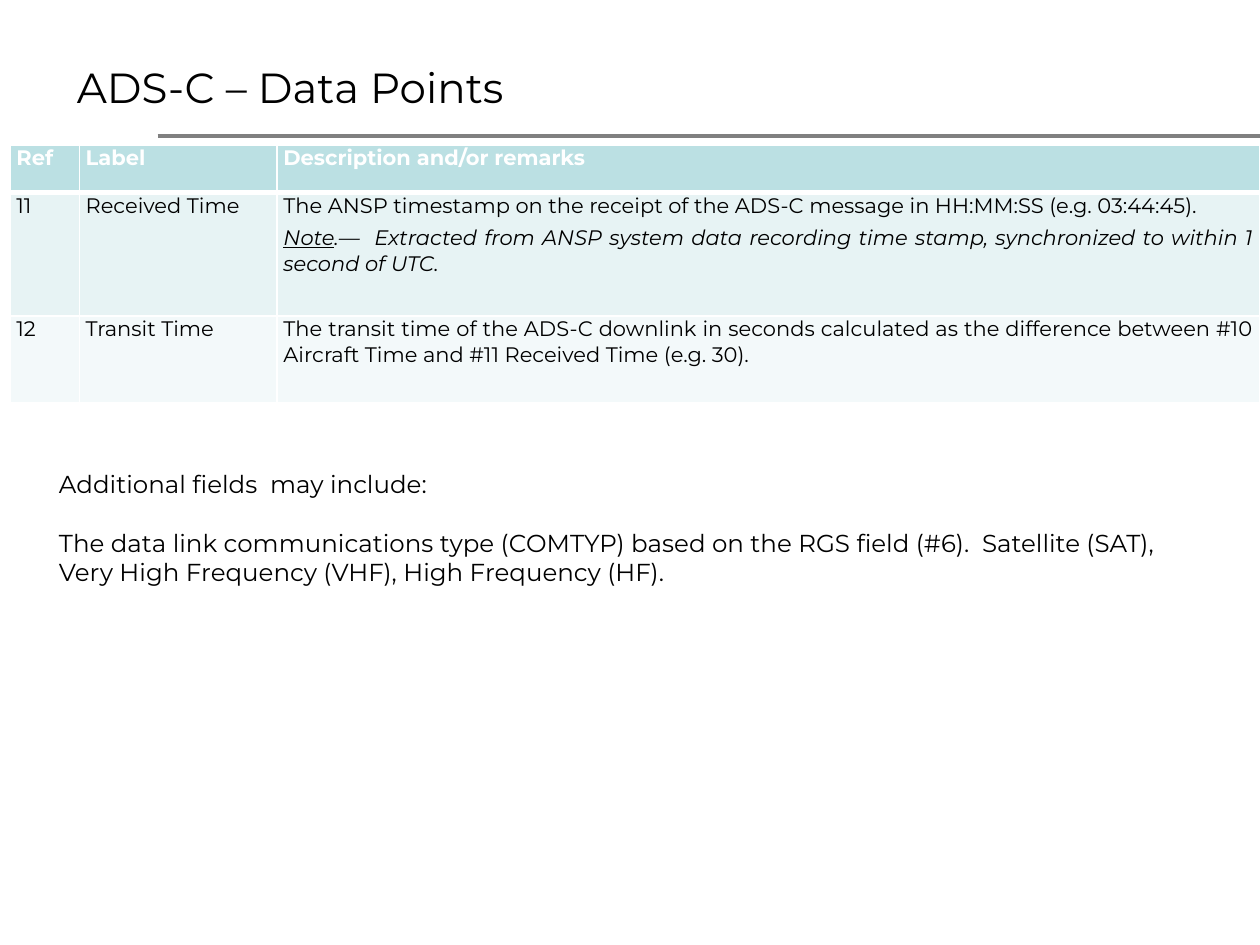
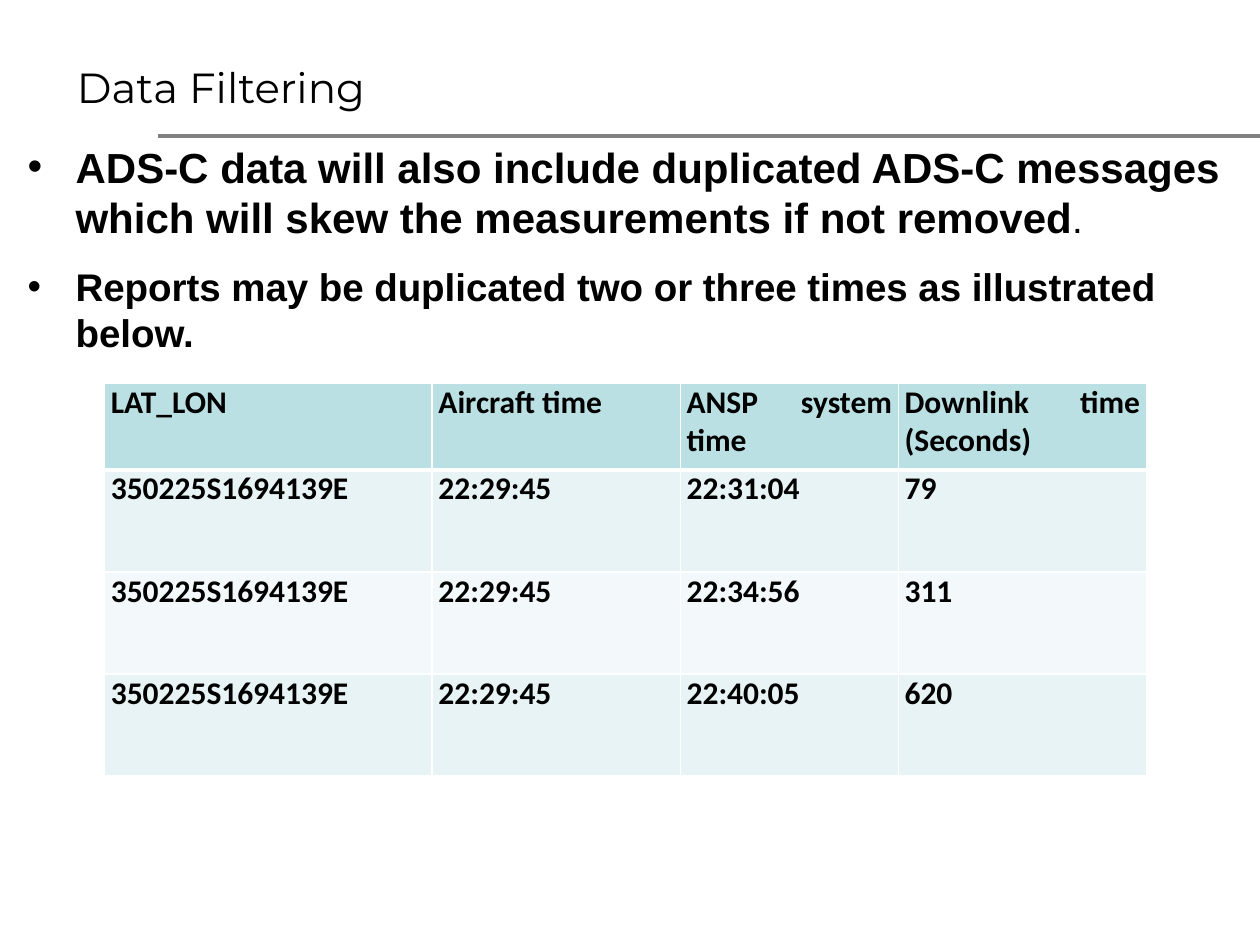
import pptx
import pptx.dml.color
import pptx.enum.shapes
import pptx.enum.text
import pptx.oxml.ns
import pptx.util
from lxml import etree

ALIGN = pptx.enum.text.PP_ALIGN
ANCHOR = pptx.enum.text.MSO_ANCHOR
BLACK, WHITE, RULE_GREY = "000000", "FFFFFF", "808080"
HEADER_FILL, BAND_FILLS = "BBE0E3", ("E7F3F4", "F3F9FA")
TITLE_ONLY, TITLE_AND_BODY = 5, 1


def color(hex_value):
    return pptx.dml.color.RGBColor.from_string(hex_value)


def add_element(parent, tag, **attributes):
    element = etree.SubElement(parent, pptx.oxml.ns.qn(tag))
    for name, value in attributes.items():
        element.set(name, str(value))
    return element


def write(paragraph, text, font="Montserrat", size=12, fill=BLACK,
          bold=False, italic=False, underline=False):
    """Add one formatted run to a paragraph."""
    run = paragraph.add_run()
    run.text = text
    run.font.name = font
    run.font.size = pptx.util.Pt(size)
    run.font.color.rgb = color(fill)
    run.font.bold, run.font.italic, run.font.underline = bold, italic, underline


class Deck:
    """Shared style and the current slide, on a grid of 100 columns by 75 rows."""

    def __init__(self):
        self.presentation = pptx.Presentation()
        self.presentation.slide_width = pptx.util.Inches(10)
        self.presentation.slide_height = pptx.util.Inches(7.5)
        self.unit = self.presentation.slide_width / 100
        self.slide = None

    def grid(self, *lengths):
        return [round(length * self.unit) for length in lengths]

    def place(self, shape, *box):
        shape.left, shape.top, shape.width, shape.height = self.grid(*box)

    def paragraphs(self, frame, items, space_before=0):
        """Yield a paragraph with each item, spaced from the second one on."""
        for index, item in enumerate(items):
            paragraph = frame.add_paragraph() if index else frame.paragraphs[0]
            paragraph.space_before = pptx.util.Pt(space_before if index else 0)
            yield paragraph, item

    def new_slide(self, title, layout):
        layouts = self.presentation.slide_layouts
        self.slide = self.presentation.slides.add_slide(layouts[layout])
        self.rule(12.5, 10.8, 100)
        shape = self.slide.shapes.title
        self.place(shape, 5.1, 3.2, 93.2, 7.4)
        shape.text_frame.vertical_anchor = ANCHOR.MIDDLE
        paragraph = shape.text_frame.paragraphs[0]
        paragraph.alignment = ALIGN.LEFT
        write(paragraph, title, size=24)

    def rule(self, left, top, right):
        connector = self.slide.shapes.add_connector(
            pptx.enum.shapes.MSO_CONNECTOR.STRAIGHT,
            *self.grid(left, top, right, top))
        connector.line.color.rgb = color(RULE_GREY)
        connector.line.width = pptx.util.Pt(2.25)
        add_element(connector._element.spPr, "a:effectLst")

    def text(self, box, lines, space_before, **style):
        shape = self.slide.shapes.add_textbox(*self.grid(*box))
        shape.text_frame.word_wrap = True
        for paragraph, line in self.paragraphs(shape.text_frame, lines, space_before):
            write(paragraph, line, **style)

    def bullets(self, box, items, space_before):
        """Fill the body placeholder; an item is a list of (text, format) runs."""
        body = self.slide.placeholders[1]
        self.place(body, *box)
        body.text_frame.auto_size = pptx.enum.text.MSO_AUTO_SIZE.NONE
        indent = pptx.util.Inches(0.38)
        for paragraph, runs in self.paragraphs(body.text_frame, items, space_before):
            properties = paragraph._p.get_or_add_pPr()
            properties.set("marL", str(indent))
            properties.set("indent", str(-indent))
            add_element(properties, "a:buChar", char="•")
            for text, style in runs:
                write(paragraph, text, font="Arial", **style)

    def border(self, cell, side, width):
        line = add_element(cell._tc.get_or_add_tcPr(), f"a:ln{side}",
                           w=pptx.util.Pt(width))
        fill = add_element(line, "a:solidFill")
        add_element(fill, "a:srgbClr", val=WHITE)

    def cell(self, cell, content, is_header, fill, style):
        """Fill a cell; content is a text or a list of paragraphs made of runs."""
        cell.margin_left = cell.margin_right = pptx.util.Inches(0.05)
        cell.margin_top = cell.margin_bottom = 0
        cell.vertical_anchor = ANCHOR.TOP
        for side in "LRTB":
            self.border(cell, side, 3 if is_header and side == "B" else 1)
        cell.fill.solid()
        cell.fill.fore_color.rgb = color(fill)
        items = [[(content, {})]] if isinstance(content, str) else content
        for paragraph, runs in self.paragraphs(cell.text_frame, items, 2):
            paragraph.alignment = ALIGN.JUSTIFY
            paragraph.space_after = pptx.util.Pt(2)
            for text, extra in runs:
                write(paragraph, text, **{**style, **extra})

    def table(self, left, top, columns, heights, rows, header_style, body_style):
        table = self.slide.shapes.add_table(
            len(rows), len(columns),
            *self.grid(left, top, sum(columns), sum(heights))).table
        table.horz_banding = False
        for column, width in zip(table.columns, self.grid(*columns)):
            column.width = width
        for row, height in zip(table.rows, self.grid(*heights)):
            row.height = height
        for index, contents in enumerate(rows):
            is_header = index == 0
            fill = HEADER_FILL if is_header else BAND_FILLS[(index - 1) % 2]
            style = header_style if is_header else body_style
            for column, content in enumerate(contents):
                self.cell(table.cell(index, column), content, is_header, fill, style)


def build_data_points(deck):
    deck.new_slide("ADS-C – Data Points", TITLE_ONLY)
    # Field definitions
    received_time = [
        [("The ANSP timestamp on the receipt of the ADS‑C message in HH:MM:SS "
          "(e.g. 03:44:45).", {})],
        [("Note", {"italic": True, "underline": True}),
         (".—  Extracted from ANSP system data recording time stamp, "
          "synchronized to within 1 second of UTC.", {"italic": True})],
    ]
    transit_time = ("The transit time of the ADS‑C downlink in seconds calculated as "
                    "the difference between #10 Aircraft Time and #11 Received Time "
                    "(e.g. 30).")
    rows = [("Ref", "Label", "Description and/or remarks"),
            ("11", "Received Time", received_time),
            ("12", "Transit Time", transit_time)]
    deck.table(0.8, 11.5, (5.5, 15.7, 78), (3.8, 9.8, 6.9), rows,
               header_style={"fill": WHITE, "bold": True}, body_style={})
    # Additional fields
    deck.text((3.7, 36.7, 91.3, 10.4),
              ["Additional fields  may include:",
               "The data link communications type (COMTYP) based on the RGS field "
               "(#6).  Satellite (SAT), Very High Frequency (VHF), High Frequency (HF)."],
              space_before=17, size=14)


def build_data_filtering(deck):
    deck.new_slide("Data Filtering", TITLE_AND_BODY)
    # Why filtering is needed
    deck.bullets((1.2, 10.7, 97.6, 52), [
        [("ADS-C data will also include duplicated ADS-C messages which will skew "
          "the measurements if not removed", {"size": 24, "bold": True}),
         (".", {"size": 22})],
        [("Reports may be duplicated two or three times as illustrated below.",
          {"size": 22, "bold": True})],
    ], space_before=12)
    # Duplicated reports
    reports = [("22:31:04", "79"), ("22:34:56", "311"), ("22:40:05", "620")]
    rows = [("LAT_LON", "Aircraft time", "ANSP system time", "Downlink time (Seconds)")]
    rows += [("350225S1694139E", "22:29:45", *report) for report in reports]
    style = {"font": "Calibri", "size": 18, "bold": True}
    deck.table(8.3, 30.4, (26, 19.7, 17.3, 19.7), (6.9,) + (8.1,) * 3, rows,
               header_style=style, body_style=style)


def main():
    deck = Deck()
    build_data_points(deck)
    build_data_filtering(deck)
    deck.presentation.save("out.pptx")


if __name__ == "__main__":
    main()
